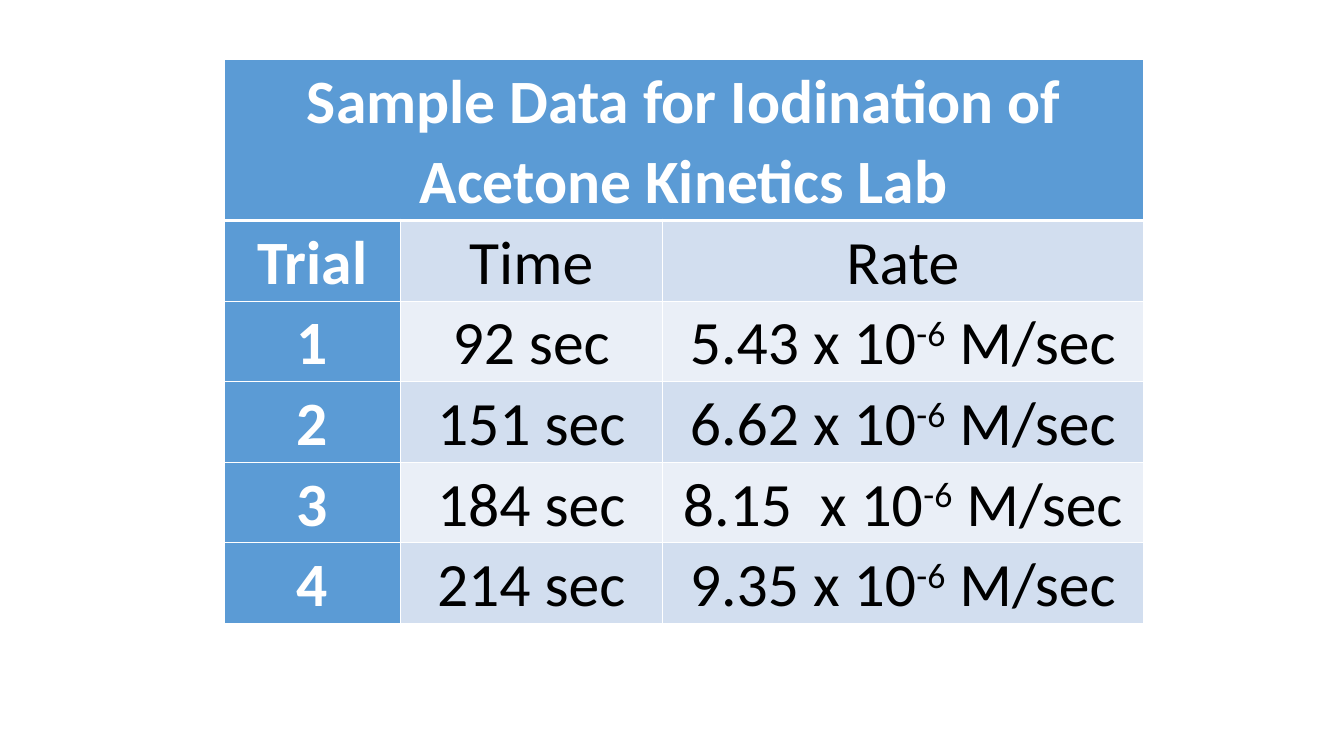
from lxml.etree import SubElement as Sub
from pptx import Presentation
from pptx.dml.color import RGBColor as RGB
from pptx.enum.text import MSO_ANCHOR as Anchor, PP_ALIGN as Align
from pptx.oxml.ns import qn
from pptx.util import Inches, Pt

WHITE = RGB(0xFF, 0xFF, 0xFF)
BLACK = RGB(0, 0, 0)
BLUE = RGB(0x5B, 0x9B, 0xD5)
PALE = RGB(0xD2, 0xDE, 0xEF)
LIGHT = RGB(0xEA, 0xEF, 0xF7)

TITLE = "Sample Data for Iodination of Acetone Kinetics Lab"
ROWS = [
    (TITLE, "", ""),
    ("Trial", "Time", "Rate"),
    ("1", "92 sec", "5.43 x 10^-6^ M/sec"),
    ("2", "151 sec", "6.62 x 10^-6^ M/sec"),
    ("3", "184 sec", "8.15  x 10^-6^ M/sec"),
    ("4", "214 sec", "9.35 x 10^-6^ M/sec"),
]
WIDTHS = [1.74, 2.6, 4.77]
HEIGHTS = [1.28, 0.63, 0.68, 0.63, 0.63, 0.63]


class Deck:
    font = {"name": "Calibri", "size": Pt(44)}
    inset = {
        "margin_left": Inches(0.07),
        "margin_right": Inches(0.07),
        "margin_top": 0,
        "margin_bottom": 0,
        "vertical_anchor": Anchor.TOP,
    }
    para = {"alignment": Align.CENTER, "line_spacing": 1.07}

    def __init__(self):
        self.prs = Presentation()
        self.prs.slide_width = Inches(13.33)
        self.prs.slide_height = Inches(7.5)
        self.slide = self.prs.slides.add_slide(self.prs.slide_layouts[6])

    def apply(self, item, style):
        for key, value in style.items():
            setattr(item, key, value)

    def border(self, cell, widths):
        props = cell._tc.get_or_add_tcPr()
        for side, width in widths.items():
            line = Sub(props, qn("a:ln" + side), w=str(Pt(width)))
            fill = Sub(line, qn("a:solidFill"))
            Sub(fill, qn("a:srgbClr"), val=str(WHITE))

    def label(self, cell, text, color, bold):
        para = cell.text_frame.paragraphs[0]
        self.apply(para, self.para)
        for i, part in enumerate(text.split("^")):
            run = para.add_run()
            run.text = part
            self.apply(run.font, {**self.font, "bold": bold})
            run.font.color.rgb = color
            if i % 2:
                run._r.get_or_add_rPr().set("baseline", "30000")

    def table(self, left, top, widths, heights, rows):
        frame = self.slide.shapes.add_table(
            len(rows), len(widths), Inches(left), Inches(top),
            Inches(sum(widths)), Inches(sum(heights)))
        grid = frame.table
        for col, width in zip(grid.columns, widths):
            col.width = Inches(width)
        for row, height in zip(grid.rows, heights):
            row.height = Inches(height)
        grid.cell(0, 0).merge(grid.cell(0, len(widths) - 1))
        for r, texts in enumerate(rows):
            for c, text in enumerate(texts):
                cell = grid.cell(r, c)
                head = r == 0 or c == 0
                self.apply(cell, self.inset)
                self.border(cell, {"L": 1, "R": 1,
                                   "T": 3 if r == 1 else 1,
                                   "B": 3 if r == 0 else 1})
                cell.fill.solid()
                band = PALE if r % 2 else LIGHT
                cell.fill.fore_color.rgb = BLUE if head else band
                if text:
                    self.label(cell, text, WHITE if head else BLACK, head)


def main():
    deck = Deck()
    deck.table(2.23, 0.59, WIDTHS, HEIGHTS, ROWS)
    deck.prs.save("out.pptx")


if __name__ == "__main__":
    main()
